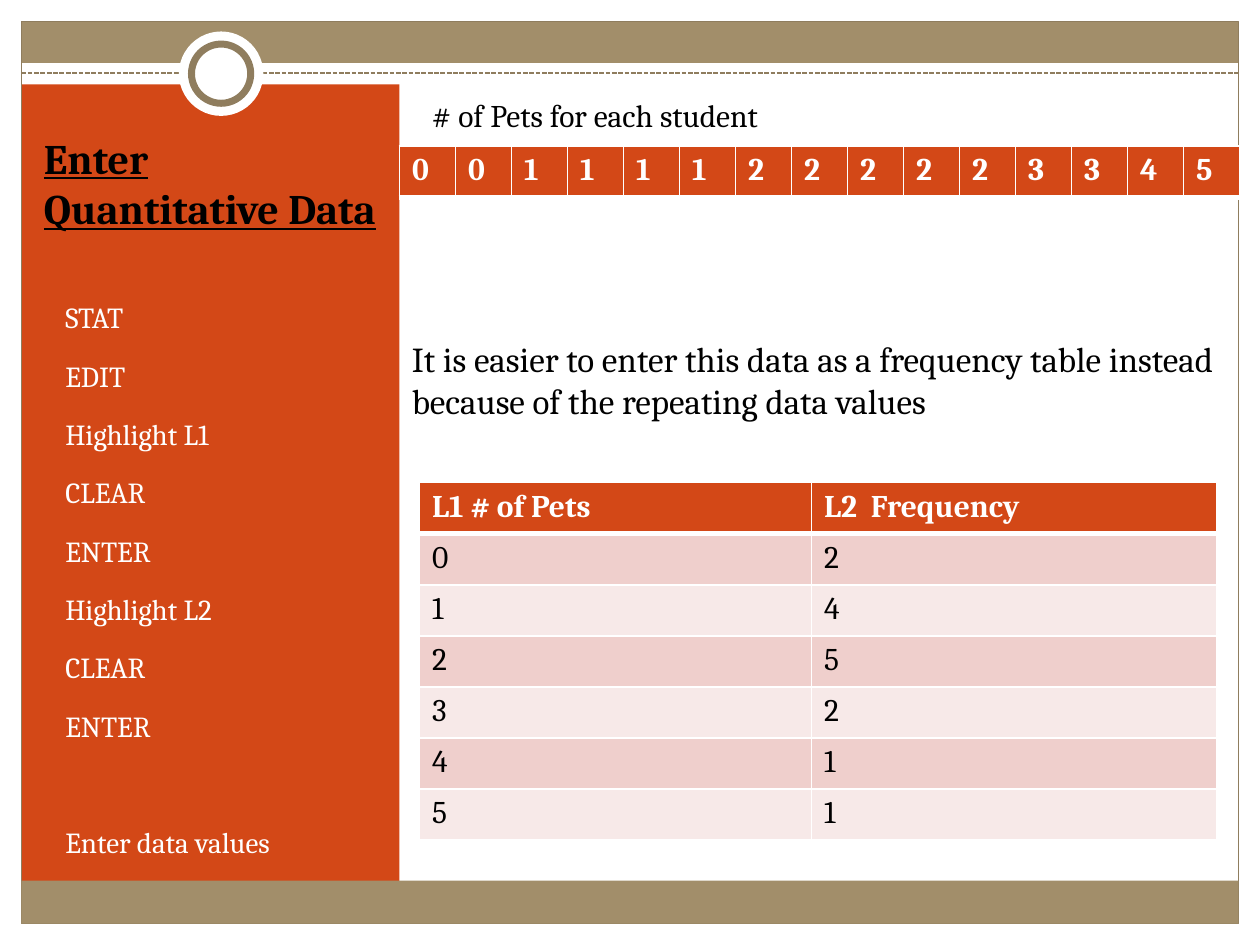
from dataclasses import dataclass

from lxml import etree
from pptx import Presentation
from pptx import util as u
from pptx.dml.color import RGBColor
from pptx.enum import dml, shapes, text
from pptx.oxml import ns

Inches, Pt = u.Inches, u.Pt
RECT, OVAL = shapes.MSO_SHAPE.RECTANGLE, shapes.MSO_SHAPE.OVAL


@dataclass(frozen=True)
class Theme:
    font: str = "Cambria"
    white: str = "FFFFFF"
    black: str = "000000"
    tan: str = "A28E6A"
    edge: str = "8F7D5E"
    red: str = "D34817"
    bands: tuple = ("EFCFCC", "F7E9E8")
    title: float = 24
    note: float = 20
    body: float = 18
    step: float = 16.6


T = Theme()


def rgb(code):
    return RGBColor.from_string(code)


def write(frame, lines, size=T.body, color=T.black, bold=False, under=False,
          before=0, after=0, wrap=True):
    """Fill a text frame, one paragraph a line."""
    frame.word_wrap = wrap
    for i, line in enumerate(lines):
        para = frame.paragraphs[0] if i == 0 else frame.add_paragraph()
        para.space_before, para.space_after = Pt(before), Pt(after)
        run = para.add_run()
        run.text = line
        font = run.font
        font.name, font.size, font.color.rgb = T.font, Pt(size), rgb(color)
        font.bold, font.underline = bold, under


def label(slide, box, lines, **style):
    frame = slide.shapes.add_textbox(*map(Inches, box)).text_frame
    frame.vertical_anchor = text.MSO_ANCHOR.TOP
    write(frame, lines, **style)
    return frame


def block(slide, box, fill=None, line=None, width=0.75, kind=RECT):
    shape = slide.shapes.add_shape(kind, *map(Inches, box))
    shape.shadow.inherit = False
    if fill:
        shape.fill.solid()
        shape.fill.fore_color.rgb = rgb(fill)
    else:
        shape.fill.background()
    if line:
        shape.line.color.rgb = rgb(line)
        shape.line.width = Pt(width)
    else:
        shape.line.fill.background()


def rule(slide, x, y, w):
    line = slide.shapes.add_connector(
        shapes.MSO_CONNECTOR.STRAIGHT,
        Inches(x), Inches(y), Inches(x + w), Inches(y))
    line.line.color.rgb = rgb(T.edge)
    line.line.width = Pt(0.9)
    line.line.dash_style = dml.MSO_LINE.SQUARE_DOT
    props = line._element.spPr
    etree.SubElement(props, ns.qn("a:effectLst"))
    dash = props.find(".//" + ns.qn("a:prstDash"))
    dash.set("val", "sysDash")


def border(cell, base):
    """Draw white cell edges; base is the width of the bottom one."""
    props = cell._tc.get_or_add_tcPr()
    for side, width in (("L", 1), ("R", 1), ("T", 1), ("B", base)):
        edge = etree.SubElement(props, ns.qn(f"a:ln{side}"), w=str(Pt(width)))
        fill = etree.SubElement(edge, ns.qn("a:solidFill"))
        etree.SubElement(fill, ns.qn("a:srgbClr"), val=T.white)


def grid(slide, box, rows, widths):
    """Place a table with a red first row and banded rows below it."""
    table = slide.shapes.add_table(
        len(rows), len(widths), *map(Inches, box)).table
    for col, width in zip(table.columns, widths):
        col.width = Inches(width)
    for r, row in enumerate(rows):
        head = r == 0
        table.rows[r].height = Inches(box[3] / len(rows))
        for c, value in enumerate(row):
            cell = table.cell(r, c)
            border(cell, 3 if head else 1)
            cell.fill.solid()
            cell.fill.fore_color.rgb = rgb(T.red if head else T.bands[(r - 1) % 2])
            write(cell.text_frame, [str(value)], bold=head,
                  color=T.white if head else T.black)


def ring(slide, x, y, size):
    block(slide, (x, y, size, size), T.white, kind=OVAL)
    gap = 0.1
    inner = size - 2 * gap
    block(slide, (x + gap, y + gap, inner, inner), T.white, T.edge, 4, OVAL)


def frame(slide, x, y, w, h):
    """Draw the margins, bands, side panel and ring within the given box."""
    block(slide, (x, y, w, 0.33), T.tan)
    for strip in ((0, y + h, 10, 0.17), (x + w, 0, 0.17, 7.5),
                  (0, 0, 10, 0.13), (0, 0, x, 7.5)):
        block(slide, strip, T.white)
    block(slide, (x, y + 0.5, 3, 6.42), T.red)
    block(slide, (x, y, w, h), line=T.edge)
    rule(slide, x, y + 0.41, w)
    ring(slide, x + 1.25, y + 0.08, 0.67)
    block(slide, (x, y + h - 0.34, w, 0.34), T.tan)


def guide(slide, x, y, w, h):
    """Write the heading and the key presses on the side panel."""
    steps = ["STAT", "EDIT", "Highlight L1", "CLEAR", "ENTER",
             "Highlight L2", "CLEAR", "ENTER", "Enter data values"]
    body = label(slide, (x + 0.17, y + 1.33, 2.58, h - 1.33), steps,
                 size=T.step, color=T.white, before=3.4, after=10)
    body.paragraphs[-1].space_before = Pt(36.6)
    label(slide, (x, y, w, 1.62), ["Enter Quantitative Data"],
          size=T.title, bold=True, under=True)


def data(slide, x, y, w):
    """Show the raw values, the remark and the frequency table."""
    counts = [2, 4, 5, 2, 1, 1]
    pets = [n for n, times in enumerate(counts) for _ in range(times)]
    rows = [("L1 # of Pets", "L2  Frequency"), *enumerate(counts)]
    grid(slide, (x + 0.16, y + 3.12, 6.33, 2.84), rows, (3.11, 3.22))
    grid(slide, (x, y + 0.45, w, 0.41), [pets], [w / len(pets)] * len(pets))
    label(slide, (x + 0.16, y, 3.05, 0.4), ["# of Pets for each student"],
          wrap=False)
    label(slide, (x, y + 1.92, w, 0.77),
          ["It is easier to enter this data as a frequency table instead "
           "because of the repeating data values"], size=T.note)


def main():
    deck = Presentation()
    deck.slide_width, deck.slide_height = Inches(10), Inches(7.5)
    slide = deck.slides.add_slide(deck.slide_layouts[6])
    frame(slide, 0.17, 0.17, 9.66, 7.16)
    guide(slide, 0.25, 1, 2.92, 5.7)
    data(slide, 3.17, 0.71, 6.67)
    deck.save("out.pptx")


if __name__ == "__main__":
    main()
